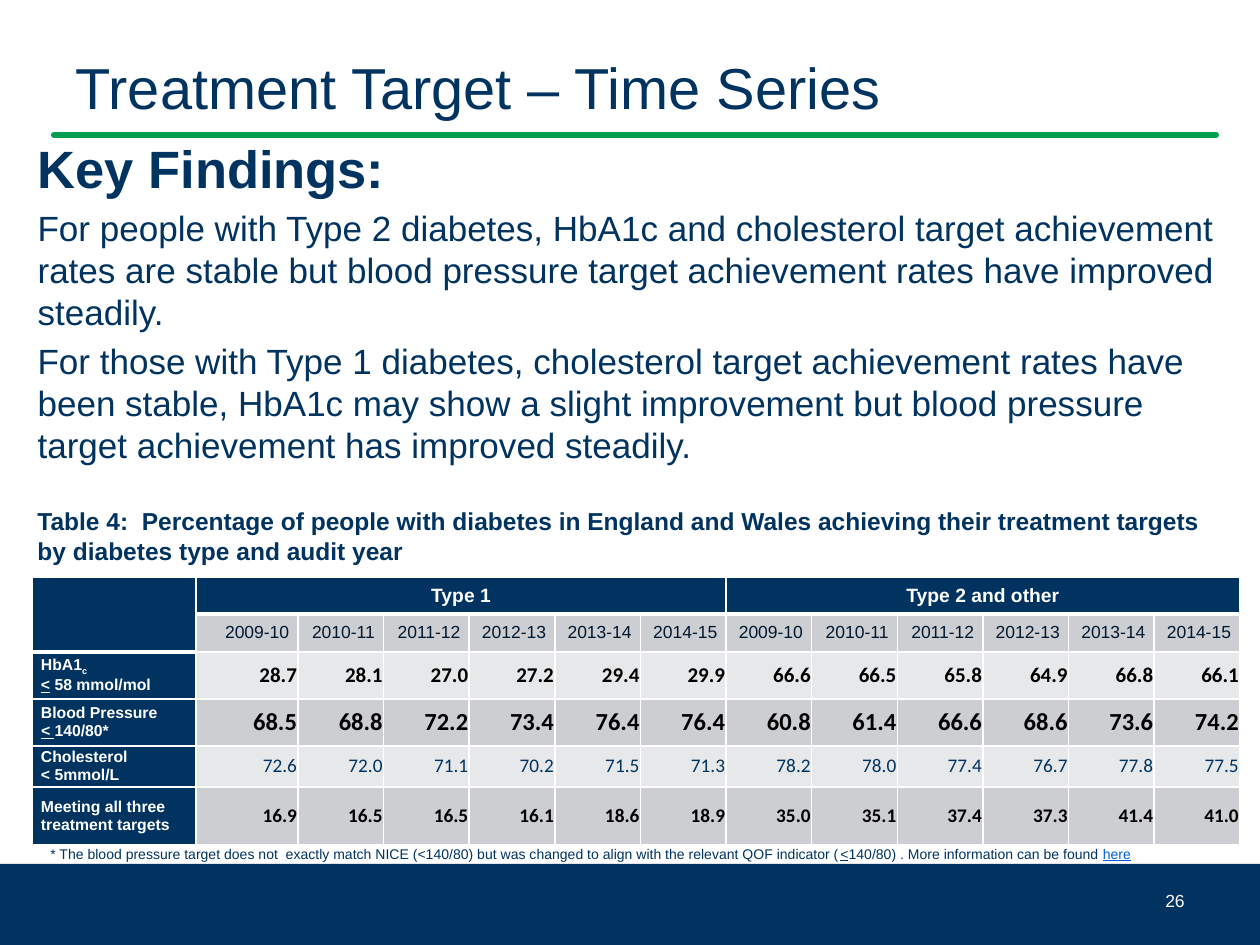
from lxml import etree
from pptx import Presentation
from pptx import util as u
from pptx.dml.color import RGBColor
from pptx.enum import shapes, text
from pptx.oxml.ns import qn

NAVY = RGBColor(0x00, 0x33, 0x60)
INK = RGBColor(0x00, 0x18, 0x30)
GREEN = RGBColor(0x00, 0xA0, 0x50)
LINK = RGBColor(0x00, 0x60, 0xE0)
BAND_DARK = RGBColor(0xCC, 0xCE, 0xD2)
BAND_LIGHT = RGBColor(0xE7, 0xE8, 0xEA)
WHITE = RGBColor(0xFF, 0xFF, 0xFF)
BLACK = RGBColor(0x00, 0x00, 0x00)

LEFT, CENTER, RIGHT = text.PP_ALIGN.LEFT, text.PP_ALIGN.CENTER, text.PP_ALIGN.RIGHT
MIDDLE, TOP = text.MSO_ANCHOR.MIDDLE, text.MSO_ANCHOR.TOP

FINDINGS = [
    ("Key Findings:", 30, True),
    ("For people with Type 2 diabetes, HbA1c and cholesterol target achievement rates "
     "are stable but blood pressure target achievement rates have improved steadily.", 20, False),
    ("For those with Type 1 diabetes, cholesterol target achievement rates have been stable, "
     "HbA1c may show a slight improvement but blood pressure target achievement has "
     "improved steadily.", 20, False),
]
CAPTION = ("Table 4:  Percentage of people with diabetes in England and Wales achieving "
           "their treatment targets by diabetes type and audit year")
FOOTNOTE = [
    ("* The blood pressure target does not  exactly match NICE (<140/80) but was changed "
     "to align with the relevant QOF indicator (", {}),
    ("<", {"underline": True}),
    ("140/80) . More information can be found ", {}),
    ("here", {"underline": True, "color": LINK}),
]
GROUPS = ["Type 1", "Type 2 and other"]
YEARS = ["2009-10", "2010-11", "2011-12", "2012-13", "2013-14", "2014-15"]
# label paragraphs, values, then size, colour, weight and fill of the values
TARGETS = [
    ([[("HbA1", {}), ("c", {"baseline": -25000})],
      [("<", {"underline": True}), (" 58 mmol/mol", {})]],
     [28.7, 28.1, 27.0, 27.2, 29.4, 29.9, 66.6, 66.5, 65.8, 64.9, 66.8, 66.1],
     12, BLACK, True, BAND_LIGHT),
    ([[("Blood Pressure", {})],
      [("<", {"underline": True, "italic": True}), (" ", {"underline": True}), ("140/80*", {})]],
     [68.5, 68.8, 72.2, 73.4, 76.4, 76.4, 60.8, 61.4, 66.6, 68.6, 73.6, 74.2],
     14, BLACK, True, BAND_DARK),
    ([[("Cholesterol", {})], [("< 5mmol/L", {})]],
     [72.6, 72.0, 71.1, 70.2, 71.5, 71.3, 78.2, 78.0, 77.4, 76.7, 77.8, 77.5],
     11, NAVY, False, BAND_LIGHT),
    ([[("Meeting all three treatment targets", {})]],
     [16.9, 16.5, 16.5, 16.1, 18.6, 18.9, 35.0, 35.1, 37.4, 37.3, 41.4, 41.0],
     11, BLACK, True, BAND_DARK),
]


def px(n):
    return u.Emu(round(n * 914400 / 126))


def place(sp, box):
    sp.left, sp.top, sp.width, sp.height = map(px, box)


def add_run(p, words, size, color, bold=False, font="Arial",
            underline=None, italic=None, baseline=None):
    r = p.add_run()
    r.text = words
    f = r.font
    f.name, f.size, f.bold = font, u.Pt(size), bold
    f.underline, f.italic = underline, italic
    f.color.rgb = color
    if baseline:
        r._r.get_or_add_rPr().set("baseline", str(baseline))


def add_runs(p, runs, **base):
    for words, extra in runs:
        add_run(p, words, **{**base, **extra})


def add_label(s, box, runs, align=LEFT, anchor=TOP, **base):
    sp = s.shapes.add_textbox(*map(px, box))
    tf = sp.text_frame
    tf.word_wrap, tf.vertical_anchor = True, anchor
    p = tf.paragraphs[0]
    p.alignment = align
    add_runs(p, runs, **base)


def add_footer(s, box, number):
    x, y, w, h = box
    bar = s.shapes.add_shape(shapes.MSO_SHAPE.RECTANGLE, *map(px, box))
    bar.shadow.inherit = False
    bar.fill.solid()
    bar.fill.fore_color.rgb = NAVY
    bar.line.fill.background()
    add_label(s, (x + w - 357, y + 12, 294, 50), [(number, {})], RIGHT, MIDDLE,
              size=10, color=WHITE)


def add_title(s, box, words):
    x, y, w, h = box
    rule = s.shapes.add_connector(shapes.MSO_CONNECTOR.STRAIGHT,
                                  px(x - 9), px(y + h), px(x + 1153), px(y + h))
    rule.line.color.rgb = GREEN
    rule.line.width = u.Pt(3.5)
    rule.line._get_or_add_ln().set("cap", "rnd")
    etree.SubElement(rule._element.spPr, qn("a:effectLst"))
    sp = s.shapes.title
    place(sp, box)
    tf = sp.text_frame
    tf.vertical_anchor = MIDDLE
    p = tf.paragraphs[0]
    p.alignment = LEFT
    add_run(p, words, 33, NAVY)


def add_findings(s, box):
    sp = s.placeholders[1]
    place(sp, box)
    tf = sp.text_frame
    tf.auto_size = text.MSO_AUTO_SIZE.SHAPE_TO_FIT_TEXT
    for i, (words, size, bold) in enumerate(FINDINGS):
        p = tf.add_paragraph() if i else tf.paragraphs[0]
        pPr = p._p.get_or_add_pPr()
        pPr.set("marL", "0")
        pPr.set("indent", "0")
        etree.SubElement(pPr, qn("a:buNone"))
        add_run(p, words, size, NAVY, bold)


def style_cell(cell, fill, side=9, bottom_width=1):
    """Set the margins, white borders and fill of a table cell."""
    cell.margin_left = cell.margin_right = px(side)
    cell.margin_top = cell.margin_bottom = 0
    cell.vertical_anchor = MIDDLE
    tcPr = cell._tc.get_or_add_tcPr()
    for edge, width in (("L", 1), ("R", 1), ("T", 1), ("B", bottom_width)):
        ln = etree.SubElement(tcPr, qn(f"a:ln{edge}"), w=str(u.Pt(width)))
        color = etree.SubElement(etree.SubElement(ln, qn("a:solidFill")), qn("a:srgbClr"))
        color.set("val", str(WHITE))
    cell.fill.solid()
    cell.fill.fore_color.rgb = fill


def fill_cell(cell, paragraphs, align, **base):
    for i, runs in enumerate(paragraphs):
        p = cell.text_frame.add_paragraph() if i else cell.text_frame.paragraphs[0]
        p.alignment = align
        add_runs(p, runs, **base)


def add_targets_table(s, box):
    n = len(YEARS)
    heights = [37, 33, 47, 47, 41, 58]
    table = s.shapes.add_table(len(heights), 1 + 2 * n, *map(px, box)).table
    table.first_row = table.horz_banding = False
    for row, h in zip(table.rows, heights):
        row.height = px(h)
    first, second = 164, 102
    rest = px((box[2] - first - second) / (2 * n - 1))
    for i, col in enumerate(table.columns):
        col.width = (px(first), px(second))[i] if i < 2 else rest

    for col in range(1 + 2 * n):
        style_cell(table.cell(0, col), NAVY, bottom_width=3)
    style_cell(table.cell(1, 0), NAVY, bottom_width=3)
    table.cell(0, 0).merge(table.cell(1, 0))
    for i, group in enumerate(GROUPS):
        start = 1 + i * n
        table.cell(0, start).merge(table.cell(0, start + n - 1))
        fill_cell(table.cell(0, start), [[(group, {})]], CENTER, size=11, color=WHITE, bold=True)
    for col, year in enumerate(YEARS * 2, 1):
        style_cell(table.cell(1, col), BAND_DARK)
        fill_cell(table.cell(1, col), [[(year, {})]], RIGHT, size=10, color=INK)

    for row, (label, values, size, color, bold, fill) in enumerate(TARGETS, 2):
        style_cell(table.cell(row, 0), NAVY)
        fill_cell(table.cell(row, 0), label, LEFT, size=9, color=WHITE, bold=True)
        for col, value in enumerate(values, 1):
            style_cell(table.cell(row, col), fill, side=1)
            fill_cell(table.cell(row, col), [[(f"{value:.1f}", {})]], RIGHT,
                      size=size, color=color, bold=bold, font="Calibri")


def main():
    prs = Presentation()
    prs.slide_width, prs.slide_height = px(1260), px(945)
    s = prs.slides.add_slide(prs.slide_layouts[1])
    add_footer(s, (0, 864, 1260, 81), "26")
    add_title(s, (63, 38, 1134, 97), "Treatment Target – Time Series")
    add_findings(s, (25, 130, 1218, 348))
    add_targets_table(s, (32, 577, 1208, 263))
    add_label(s, (25, 500, 1216, 102), [(CAPTION, {})], size=14, color=NAVY, bold=True)
    add_label(s, (38, 839, 1157, 30), FOOTNOTE, size=8, color=NAVY)
    prs.save("out.pptx")


if __name__ == "__main__":
    main()
